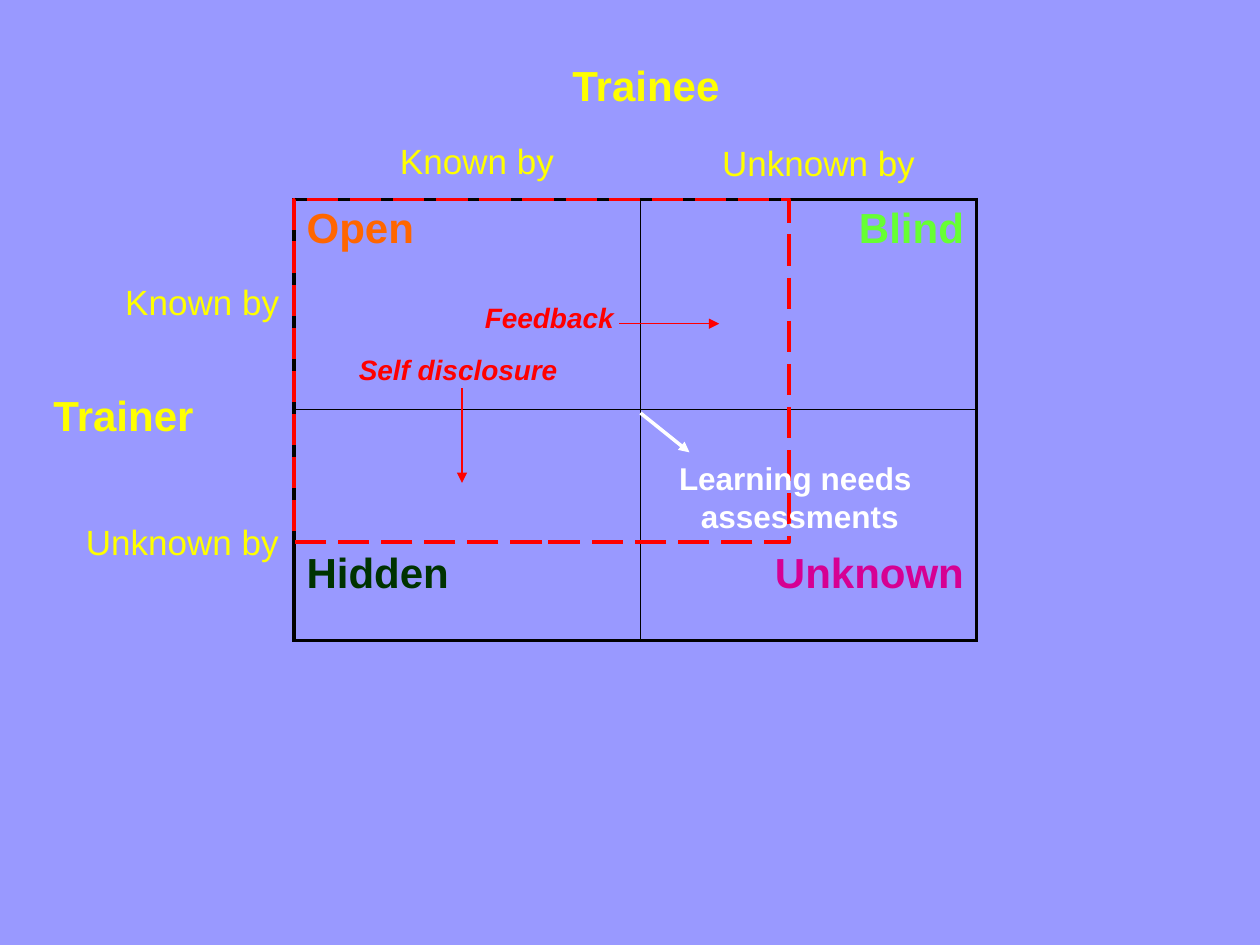
from lxml.etree import SubElement
from pptx import Presentation
from pptx.dml.color import RGBColor
from pptx.enum.dml import MSO_LINE
from pptx.enum.shapes import MSO_CONNECTOR, MSO_SHAPE
from pptx.enum.text import MSO_ANCHOR, MSO_AUTO_SIZE, PP_ALIGN
from pptx.oxml.ns import qn
from pptx.util import Pt

PERIWINKLE = RGBColor(0x99, 0x99, 0xFF)
YELLOW = RGBColor(0xFF, 0xFF, 0x00)
RED = RGBColor(0xFF, 0x00, 0x00)
WHITE = RGBColor(0xFF, 0xFF, 0xFF)
BLACK = RGBColor(0x00, 0x00, 0x00)
ORANGE = RGBColor(0xFF, 0x66, 0x00)
GREEN = RGBColor(0x66, 0xFF, 0x33)
DARK_GREEN = RGBColor(0x00, 0x33, 0x00)
MAGENTA = RGBColor(0xD6, 0x00, 0x93)

LEFT, TOP = 168, 114
COLUMNS, ROWS = (198, 192), (120, 132)
HEADING = {"size": 24, "bold": True}
MOVEMENT = {"size": 16, "bold": True, "italic": True, "color": RED}


class JohariSlide:
    font_name = "Arial"
    outer_width, inner_width = 2.25, 1

    def __init__(self, deck):
        self.page = deck.slides.add_slide(deck.slide_layouts[6])
        self.page.background.fill.solid()
        self.page.background.fill.fore_color.rgb = PERIWINKLE

    def style(self, para, size=20, color=YELLOW, bold=False, italic=False):
        font = para.font
        font.name, font.size = self.font_name, Pt(size)
        font.bold, font.italic = bold, italic
        font.color.rgb = color

    def text(self, lines, left, top, width, height, wrap=False,
             align=PP_ALIGN.LEFT, anchor=MSO_ANCHOR.TOP, **look):
        box = self.page.shapes.add_textbox(Pt(left), Pt(top), Pt(width), Pt(height))
        frame = box.text_frame
        frame.text = lines
        frame.word_wrap = wrap
        frame.auto_size = MSO_AUTO_SIZE.SHAPE_TO_FIT_TEXT
        frame.vertical_anchor = anchor
        for para in frame.paragraphs:
            para.alignment = align
            self.style(para, **look)

    def border(self, cell, side, width):
        line = SubElement(cell._tc.get_or_add_tcPr(), qn(f"a:ln{side}"), w=str(Pt(width)))
        fill = SubElement(line, qn("a:solidFill"))
        SubElement(fill, qn("a:srgbClr"), val=str(BLACK))

    def window(self, panes):
        table = self.page.shapes.add_table(
            2, 2, Pt(LEFT), Pt(TOP), Pt(sum(COLUMNS)), Pt(sum(ROWS))).table
        table.first_row = table.horz_banding = False
        for index in range(2):
            table.columns[index].width = Pt(COLUMNS[index])
            table.rows[index].height = Pt(ROWS[index])
        for row, pane_row in enumerate(panes):
            for column, (name, color) in enumerate(pane_row):
                cell = table.cell(row, column)
                cell.text = name
                para = cell.text_frame.paragraphs[0]
                para.alignment = PP_ALIGN.RIGHT if column else PP_ALIGN.LEFT
                self.style(para, color=color, **HEADING)
                # Names in the lower row sit below the dashed frame
                cell.margin_top = Pt(80.5 if row else 3.6)
                outer_sides = ("LR"[column], "TB"[row])
                for side in "LRTB":
                    outer = side in outer_sides
                    self.border(cell, side, self.outer_width if outer else self.inner_width)
                cell.fill.background()

    def dashed_frame(self, left, top, width, height):
        frame = self.page.shapes.add_shape(
            MSO_SHAPE.RECTANGLE, Pt(left), Pt(top), Pt(width), Pt(height))
        frame.shadow.inherit = False
        frame.fill.background()
        frame.line.color.rgb = RED
        frame.line.width = Pt(self.outer_width)
        frame.line.dash_style = MSO_LINE.LONG_DASH

    def arrow(self, start, end, color=RED, width=0.75):
        line = self.page.shapes.add_connector(
            MSO_CONNECTOR.STRAIGHT, *map(Pt, start + end))
        line.line.color.rgb = color
        line.line.width = Pt(width)
        properties = line.element.spPr
        SubElement(properties.find(qn("a:ln")), qn("a:tailEnd"), type="triangle")
        SubElement(properties, qn("a:effectLst"))


def main():
    deck = Presentation()
    deck.slide_width, deck.slide_height = Pt(720), Pt(540)
    slide = JohariSlide(deck)

    # Four panes
    slide.window([
        [("Open", ORANGE), ("Blind", GREEN)],
        [("Hidden", DARK_GREEN), ("Unknown", MAGENTA)],
    ])

    # Axis labels
    slide.text("Known by", 221.5, 76.3, 105, 31)
    slide.text("Unknown by", 405.5, 77.3, 147.5, 31, wrap=True)
    slide.text("Known by", 64.5, 157, 105, 31)
    slide.text("Unknown by", 42, 294, 127, 31)
    slide.text("Trainee", 320, 30.5, 101, 36, **HEADING)
    slide.text("Trainer", 23.5, 219, 97, 36, **HEADING)

    # Enlarged open area and the movements that widen it
    slide.dashed_frame(LEFT, TOP, 283, 196)
    slide.text("Self disclosure", 198, 198, 128, 26.6, **MOVEMENT)
    slide.text("Feedback", 270, 168, 88, 26.6, **MOVEMENT)
    slide.arrow((264, 222), (264, 276))
    slide.arrow((354, 185), (411, 185))

    # Learning needs
    slide.arrow((366, 236), (394, 258.5), WHITE, 2)
    slide.text("Learning needs \nassessments", 380, 258.5, 154, 51,
               align=PP_ALIGN.CENTER, anchor=MSO_ANCHOR.MIDDLE,
               size=18, color=WHITE, bold=True)

    deck.save("out.pptx")


if __name__ == "__main__":
    main()
